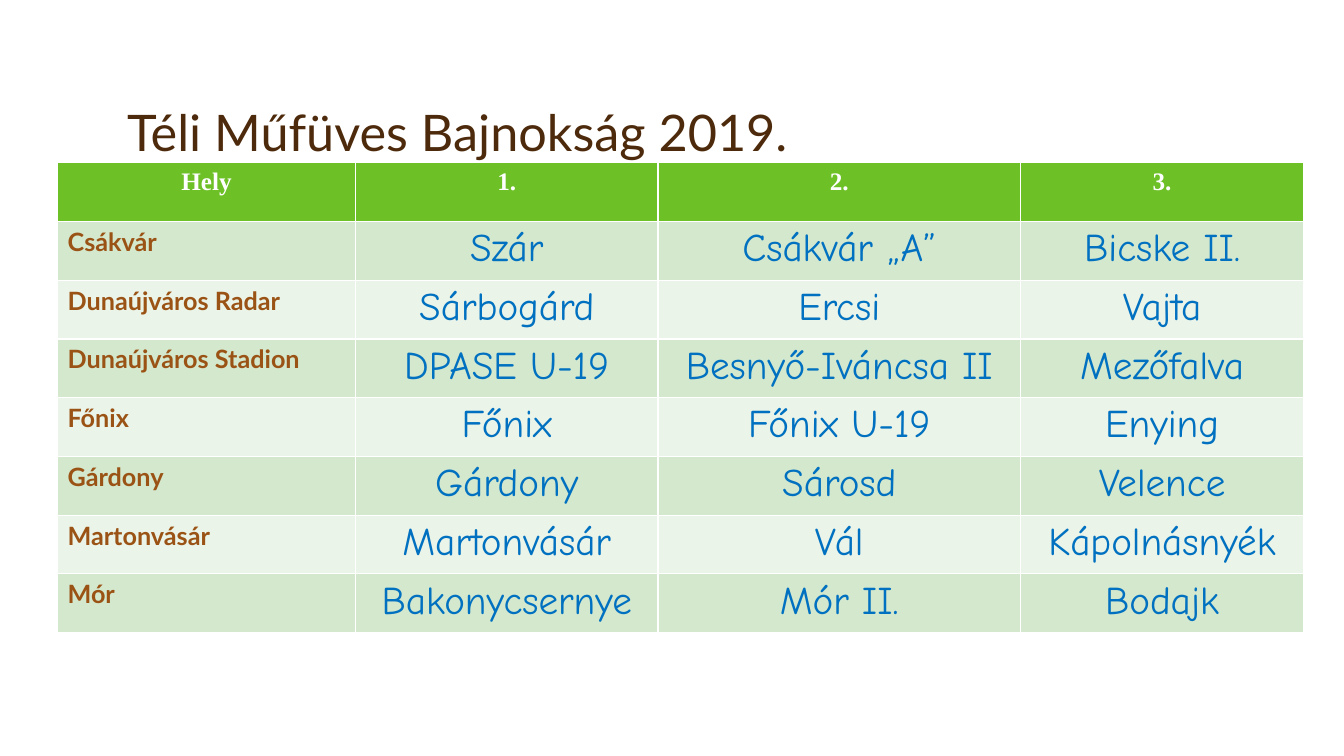
from dataclasses import dataclass

from pptx import Presentation
from pptx.dml.color import RGBColor
from pptx.enum.text import MSO_AUTO_SIZE as AutoSize
from pptx.enum.text import MSO_VERTICAL_ANCHOR as Anchor
from pptx.enum.text import PP_PARAGRAPH_ALIGNMENT as Align
from pptx.util import Cm, Pt


@dataclass(frozen=True)
class Theme:
    title_color: str = "4D2A0B"
    header_color: str = "FFFFFF"
    venue_color: str = "9A5315"
    team_color: str = "0070C0"
    header_fill: str = "6DC025"
    band_fills: tuple = ("D4E8CD", "EBF4E8")
    text_font: str = "Lato"
    header_font: str = "Times New Roman"
    team_font: str = "Comic Neue"
    title_size: int = 36
    label_size: int = 18
    team_size: int = 28


THEME = Theme()
HEADINGS = ("Hely", "1.", "2.", "3.")
VENUES = (
    ("Csákvár", "Szár", "Csákvár „A”", "Bicske II."),
    ("Dunaújváros Radar", "Sárbogárd", "Ercsi", "Vajta"),
    ("Dunaújváros Stadion", "DPASE U-19", "Besnyő-Iváncsa II", "Mezőfalva"),
    ("Főnix", "Főnix", "Főnix U-19", "Enying"),
    ("Gárdony", "Gárdony", "Sárosd", "Velence"),
    ("Martonvásár", "Martonvásár", "Vál", "Kápolnásnyék"),
    ("Mór", "Bakonycsernye", "Mór II.", "Bodajk"),
)
COLUMN_WIDTHS = (7.51, 7.62, 9.14, 7.13)
ROW_HEIGHT = 1.48


def write_text(text_frame, text, *, font, size, color, bold=False, align=Align.LEFT):
    paragraph = text_frame.paragraphs[0]
    paragraph.alignment = align
    run = paragraph.add_run()
    run.text = text
    run.font.name = font
    run.font.size = Pt(size)
    run.font.bold = bold
    run.font.color.rgb = RGBColor.from_string(color)
    return paragraph


def add_title(slide, text):
    title = slide.shapes.title
    title.left, title.top, title.width, title.height = Cm(2.95), Cm(0.84), Cm(27.94), Cm(3.38)
    title.text_frame.auto_size = AutoSize.NONE
    title.text_frame.vertical_anchor = Anchor.BOTTOM
    paragraph = write_text(title.text_frame, text, font=THEME.text_font,
                           size=THEME.title_size, color=THEME.title_color)
    paragraph.line_spacing = 0.9


def fill_row(table, row, texts, fill, label_format, value_format):
    for column, text in enumerate(texts):
        cell = table.cell(row, column)
        cell.fill.solid()
        cell.fill.fore_color.rgb = RGBColor.from_string(fill)
        write_text(cell.text_frame, text, **(value_format if column else label_format))


def add_venue_table(slide):
    row_count = len(VENUES) + 1
    table = slide.shapes.add_table(
        row_count, len(HEADINGS), Cm(1.45), Cm(4.1),
        Cm(sum(COLUMN_WIDTHS)), Cm(ROW_HEIGHT * row_count)).table
    for column, width in zip(table.columns, COLUMN_WIDTHS):
        column.width = Cm(width)
    for row in table.rows:
        row.height = Cm(ROW_HEIGHT)

    header = dict(font=THEME.header_font, size=THEME.label_size,
                  color=THEME.header_color, bold=True, align=Align.CENTER)
    venue = dict(font=THEME.text_font, size=THEME.label_size,
                 color=THEME.venue_color, bold=True)
    team = dict(font=THEME.team_font, size=THEME.team_size,
                color=THEME.team_color, align=Align.CENTER)
    fill_row(table, 0, HEADINGS, THEME.header_fill, header, header)
    for index, texts in enumerate(VENUES):
        fill_row(table, index + 1, texts, THEME.band_fills[index % 2], venue, team)


def main():
    presentation = Presentation()
    presentation.slide_width, presentation.slide_height = Cm(33.87), Cm(19.05)
    slide = presentation.slides.add_slide(presentation.slide_layouts[5])
    add_title(slide, "Téli Műfüves Bajnokság 2019.")
    add_venue_table(slide)
    presentation.save("out.pptx")


if __name__ == "__main__":
    main()
